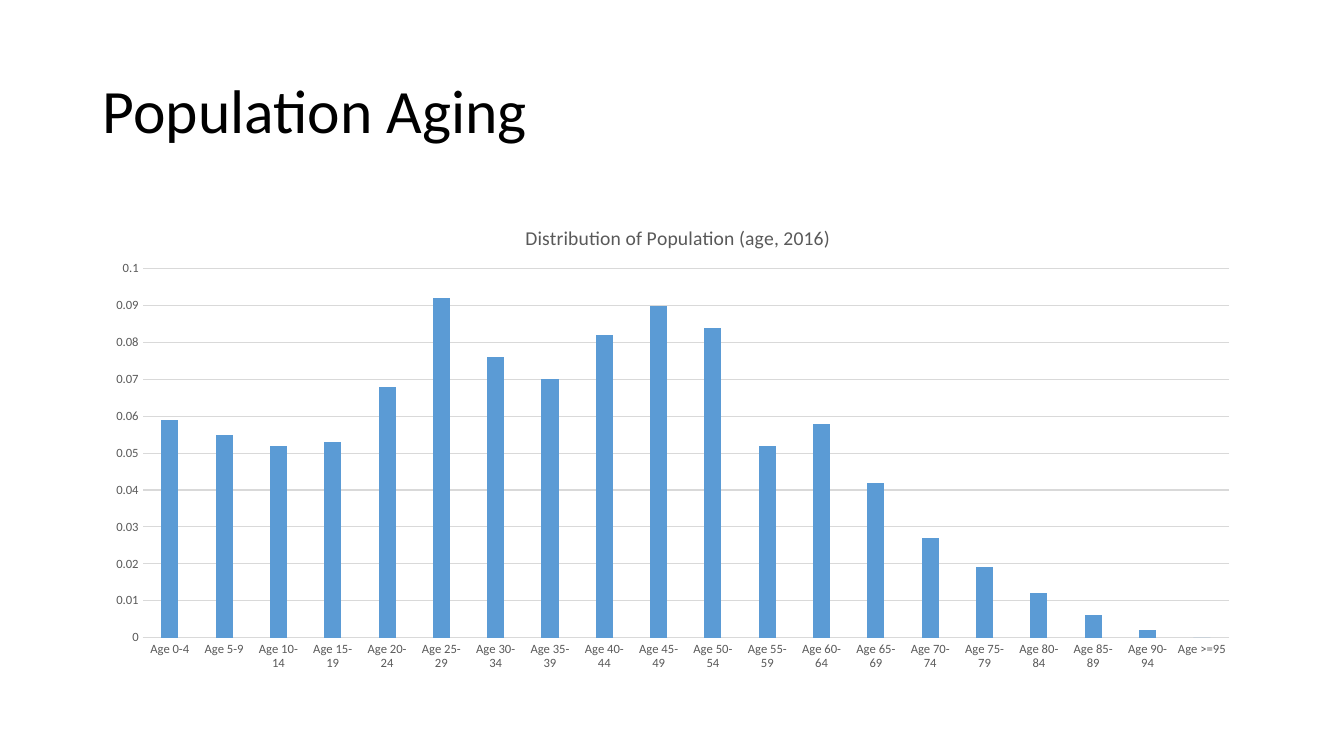
from dataclasses import dataclass

from lxml.etree import SubElement
from pptx import Presentation
from pptx.chart.data import CategoryChartData as ChartData
from pptx.dml.color import RGBColor as Color
from pptx.enum.chart import XL_CHART_TYPE as ChartType, XL_TICK_MARK as TickMark
from pptx.enum.text import MSO_ANCHOR as Anchor
from pptx.oxml.ns import qn
from pptx.util import Emu, Pt

PX = 9144
BLANK_LAYOUT = 6
AGE_GROUPS = [f"Age {start}-{start + 4}" for start in range(0, 95, 5)] + ["Age >=95"]
SHARES = [
    0.059, 0.055, 0.052, 0.053, 0.068, 0.092, 0.076, 0.07, 0.082, 0.09,
    0.084, 0.052, 0.058, 0.042, 0.027, 0.019, 0.012, 0.006, 0.002, 0,
]


@dataclass(frozen=True)
class Theme:
    """Colours, font and type sizes of the deck."""

    font: str = "Calibri"
    ink: Color = Color(0, 0, 0)
    label: Color = Color(0x59, 0x59, 0x59)
    rule: Color = Color(0xD9, 0xD9, 0xD9)
    bar: Color = Color(0x5B, 0x9B, 0xD5)
    title_size: int = 44
    chart_title_size: int = 14
    chart_size: int = 10
    axis_size: int = 9
    rule_width: float = 0.75


THEME = Theme()


def px(*lengths):
    """Turn whole px into EMU."""
    return [Emu(length * PX) for length in lengths]


def style_font(font, size, color):
    """Apply the deck font with a size and colour."""
    font.name = THEME.font
    font.size = Pt(size)
    font.bold = False
    font.color.rgb = color


def style_rule(line):
    """Draw a line as a thin grey rule."""
    line.color.rgb = THEME.rule
    line.width = Pt(THEME.rule_width)


def set_layout(element, index, **parts):
    """Fix a chart part at fractions of the chart area."""
    for old in element.findall(qn("c:layout")):
        element.remove(old)
    layout = SubElement(element, qn("c:layout"))
    element.insert(index, layout)
    manual = SubElement(layout, qn("c:manualLayout"))
    for name, value in parts.items():
        SubElement(manual, qn(f"c:{name}")).set("val", str(value))


def add_title(page, box, text):
    """Add the slide title in its box."""
    frame = page.shapes.add_textbox(*px(*box)).text_frame
    frame.word_wrap = True
    frame.vertical_anchor = Anchor.MIDDLE
    para = frame.paragraphs[0]
    para.line_spacing = 0.9
    span = para.add_run()
    span.text = text
    style_font(span.font, THEME.title_size, THEME.ink)


def style_axes(chart):
    """Style both axes and the gridlines."""
    for axis in (chart.category_axis, chart.value_axis):
        axis.major_tick_mark = axis.minor_tick_mark = TickMark.NONE
        style_font(axis.tick_labels.font, THEME.axis_size, THEME.label)
    style_rule(chart.category_axis.format.line)
    values = chart.value_axis
    values.format.line.fill.background()
    values.minimum_scale, values.maximum_scale, values.major_unit = 0, 0.1, 0.01
    values.tick_labels.number_format = "General"
    values.tick_labels.number_format_is_linked = False
    style_rule(values.major_gridlines.format.line)


def add_chart_title(chart, text):
    """Add the heading above the plot."""
    chart.has_title = True
    span = chart.chart_title.text_frame.paragraphs[0].add_run()
    span.text = text
    style_font(span.font, THEME.chart_title_size, THEME.label)
    set_layout(chart.chart_title._element, 1, xMode="edge", yMode="edge", x=0.37, y=0.04)


def add_age_chart(page, box):
    """Add the column chart of population shares by age."""
    data = ChartData(number_format="General")
    data.categories = AGE_GROUPS
    data.add_series("Series 1", SHARES)
    chart = page.shapes.add_chart(ChartType.COLUMN_CLUSTERED, *px(*box), data).chart
    chart.has_legend = False
    style_font(chart.font, THEME.chart_size, THEME.ink)
    add_chart_title(chart, "Distribution of Population (age, 2016)")
    style_axes(chart)
    plot = chart.plots[0]
    plot.gap_width, plot.overlap = 219, -27
    plot.vary_by_categories = False
    fill = plot.series[0].format.fill
    fill.solid()
    fill.fore_color.rgb = THEME.bar
    plot_area = chart._chartSpace.chart.plotArea
    set_layout(plot_area, 0, layoutTarget="inner", xMode="edge", yMode="edge",
               x=0.043, y=0.14, w=0.937, h=0.769)


def main():
    """Build and save the deck."""
    deck = Presentation()
    deck.slide_width, deck.slide_height = px(1333, 750)
    page = deck.slides.add_slide(deck.slide_layouts[BLANK_LAYOUT])
    add_title(page, (92, 40, 1150, 145), "Population Aging")
    add_age_chart(page, (92, 200, 1150, 476))
    deck.save("out.pptx")


if __name__ == "__main__":
    main()
